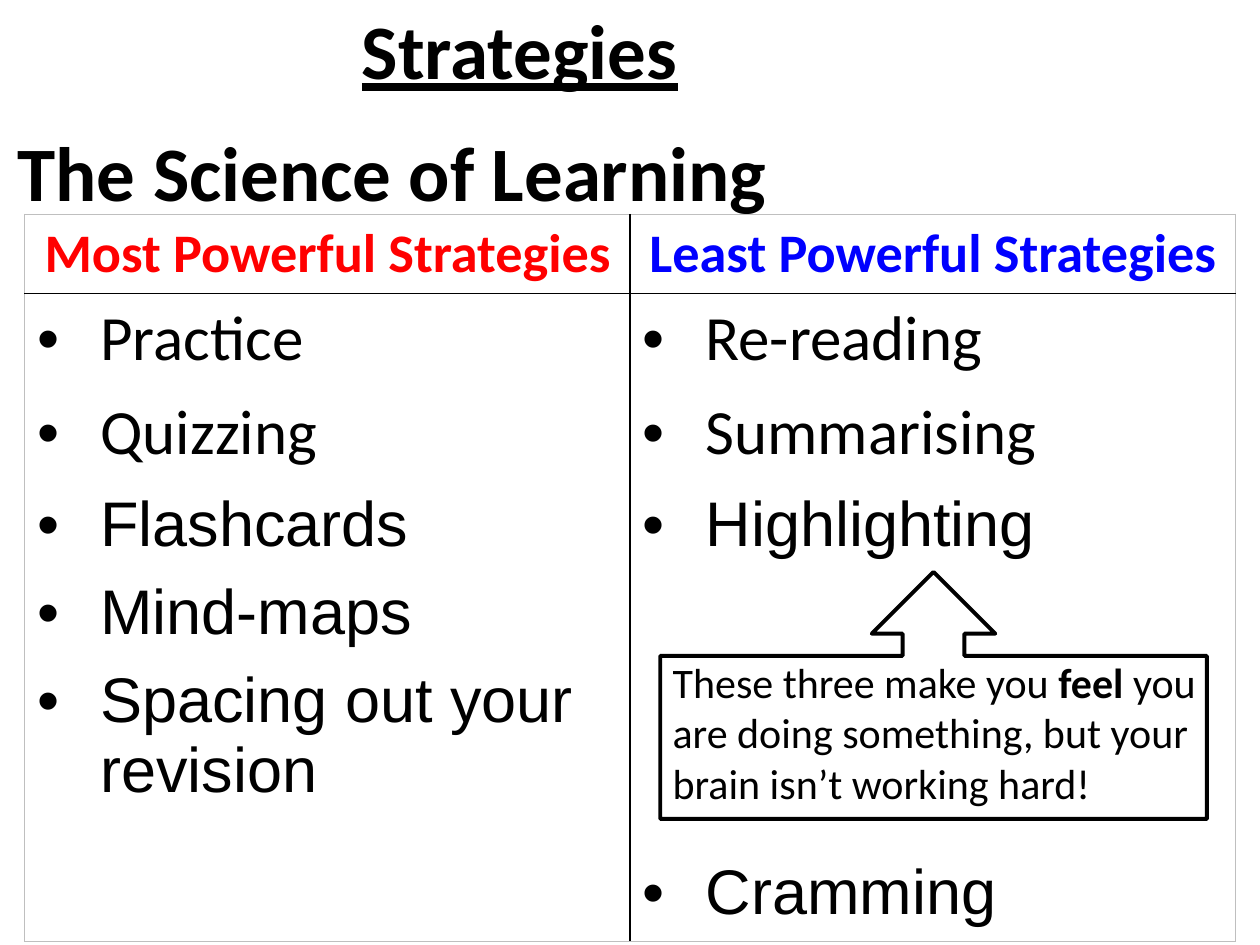
from dataclasses import dataclass

from lxml.etree import SubElement
from pptx import Presentation
from pptx.dml.color import RGBColor as RGB
from pptx.enum.shapes import MSO_SHAPE as Preset
from pptx.enum.text import MSO_ANCHOR as Anchor, PP_ALIGN as Align
from pptx.oxml import parse_xml
from pptx.oxml.ns import nsdecls, qn
from pptx.util import Cm, Pt


@dataclass(frozen=True)
class Theme:
    black: RGB = RGB(0, 0, 0)
    white: RGB = RGB(255, 255, 255)
    strong: RGB = RGB(255, 0, 0)
    weak: RGB = RGB(0, 0, 255)
    frame: RGB = RGB(0xBF, 0xBF, 0xBF)
    main_font: str = "Calibri"
    list_font: str = "Arial"
    title_size: int = 44
    header_size: int = 31
    list_size: int = 36
    note_size: int = 24


class SlideBuilder:
    def __init__(self, slide, theme):
        self.slide = slide
        self.theme = theme

    def add_run(self, paragraph, text, size, color=None, **formats):
        run = paragraph.add_run()
        run.text = text
        values = {"name": self.theme.main_font, "size": Pt(size), "bold": False}
        for name, value in (values | formats).items():
            setattr(run.font, name, value)
        run.font.color.rgb = color or self.theme.black

    def add_title(self, text, box):
        title = self.slide.shapes.title
        for name, value in zip(("left", "top", "width", "height"), box):
            setattr(title, name, Cm(value))
        title.text_frame.vertical_anchor = Anchor.MIDDLE
        paragraph = title.text_frame.paragraphs[0]
        paragraph.alignment = Align.LEFT
        self.add_run(paragraph, text, self.theme.title_size, bold=True)

    def add_text(self, runs, box, size, **paragraph_formats):
        """Add a wrapped text box; runs are (text, font formats) pairs."""
        shape = self.slide.shapes.add_textbox(*map(Cm, box))
        shape.text_frame.word_wrap = True
        paragraph = shape.text_frame.paragraphs[0]
        for name, value in paragraph_formats.items():
            setattr(paragraph, name, value)
        for text, formats in runs:
            self.add_run(paragraph, text, size, **formats)

    def add_callout(self, box, adjustments):
        shape = self.slide.shapes.add_shape(Preset.UP_ARROW_CALLOUT, *map(Cm, box))
        shape.shadow.inherit = False
        shape.fill.solid()
        shape.fill.fore_color.rgb = self.theme.white
        shape.line.color.rgb = self.theme.black
        shape.line.width = Pt(2.25)
        for index, value in enumerate(adjustments):
            shape.adjustments[index] = value

    def add_comparison(self, columns, position, column_width, row_heights):
        """Add a table; columns are (heading, colour, list items) triples."""
        size = (column_width * len(columns), sum(row_heights))
        table = self.slide.shapes.add_table(
            len(row_heights), len(columns), *map(Cm, position + size)).table
        for row, height in zip(table.rows, row_heights):
            row.height = Cm(height)
        for index, (heading, color, items) in enumerate(columns):
            header, body = table.cell(0, index), table.cell(1, index)
            paragraph = header.text_frame.paragraphs[0]
            paragraph.alignment = Align.CENTER
            self.add_run(paragraph, heading, self.theme.header_size, color, bold=True)
            self.fill_list(body.text_frame, items)
            sides = {"L": index > 0, "R": index < len(columns) - 1}
            self.style_cell(header, sides | {"T": False, "B": True})
            self.style_cell(body, sides | {"T": True, "B": False})

    def fill_list(self, frame, items):
        """Write bulleted items given as (text, font, space before)."""
        for index, (text, font, space_before) in enumerate(items):
            paragraph = frame.add_paragraph() if index else frame.paragraphs[0]
            paragraph.space_before = Pt(space_before)
            paragraph.space_after = Pt(10)
            properties = paragraph._p.get_or_add_pPr()
            properties.set("marL", str(Cm(1.27)))
            properties.set("indent", str(Cm(-1.27)))
            SubElement(properties, qn("a:buFont"), typeface=self.theme.list_font)
            SubElement(properties, qn("a:buChar"), char="•")
            self.add_run(paragraph, text, self.theme.list_size, name=font)

    def style_cell(self, cell, sides):
        """Clear the fill and draw borders; sides maps L, R, T, B to inner or not."""
        cell.fill.background()
        properties = cell._tc.get_or_add_tcPr()
        for index, (side, inner) in enumerate(sides.items()):
            color = self.theme.black if inner else self.theme.frame
            width = Pt(1) if inner else Pt(0.75)
            properties.insert(index, parse_xml(
                f'<a:ln{side} {nsdecls("a")} w="{width}"><a:solidFill>'
                f'<a:srgbClr val="{color}"/></a:solidFill></a:ln{side}>'))


def main():
    theme = Theme()
    presentation = Presentation()
    presentation.slide_width, presentation.slide_height = Cm(25.4), Cm(19.05)
    slide = presentation.slides.add_slide(presentation.slide_layouts[5])
    builder = SlideBuilder(slide, theme)

    builder.add_text([("Strategies", {"bold": True, "underline": True})],
                     (3.05, -0.08, 14.86, 2.13), theme.title_size,
                     alignment=Align.CENTER)
    builder.add_title("The Science of Learning", (0.1, 2.54, 25.4, 1.8))

    main_font, list_font = theme.main_font, theme.list_font
    callout_gap = 160
    powerful = [("Practice", main_font, 0), ("Quizzing", main_font, 0),
                ("Flashcards", list_font, 0), ("Mind-maps", list_font, 0),
                ("Spacing out your revision", list_font, 0)]
    powerless = [("Re-reading", main_font, 0), ("Summarising", main_font, 0),
                 ("Highlighting", list_font, 0),
                 ("Cramming", list_font, callout_gap)]
    builder.add_comparison([("Most Powerful Strategies", theme.strong, powerful),
                            ("Least Powerful Strategies", theme.weak, powerless)],
                           (0.5, 4.32), 12.2, (1.6, 12.98))

    builder.add_callout((13.31, 11.53, 11.02, 4.98), (0.25, 0.25, 0.25, 0.66))
    builder.add_text([("These three make you ", {}), ("feel", {"bold": True}),
                      (" you are doing something, but your brain "
                       "isn’t working hard!", {})],
                     (13.31, 13.11, 11.3, 3.33), theme.note_size,
                     space_after=Pt(12))
    presentation.save("out.pptx")


if __name__ == "__main__":
    main()
